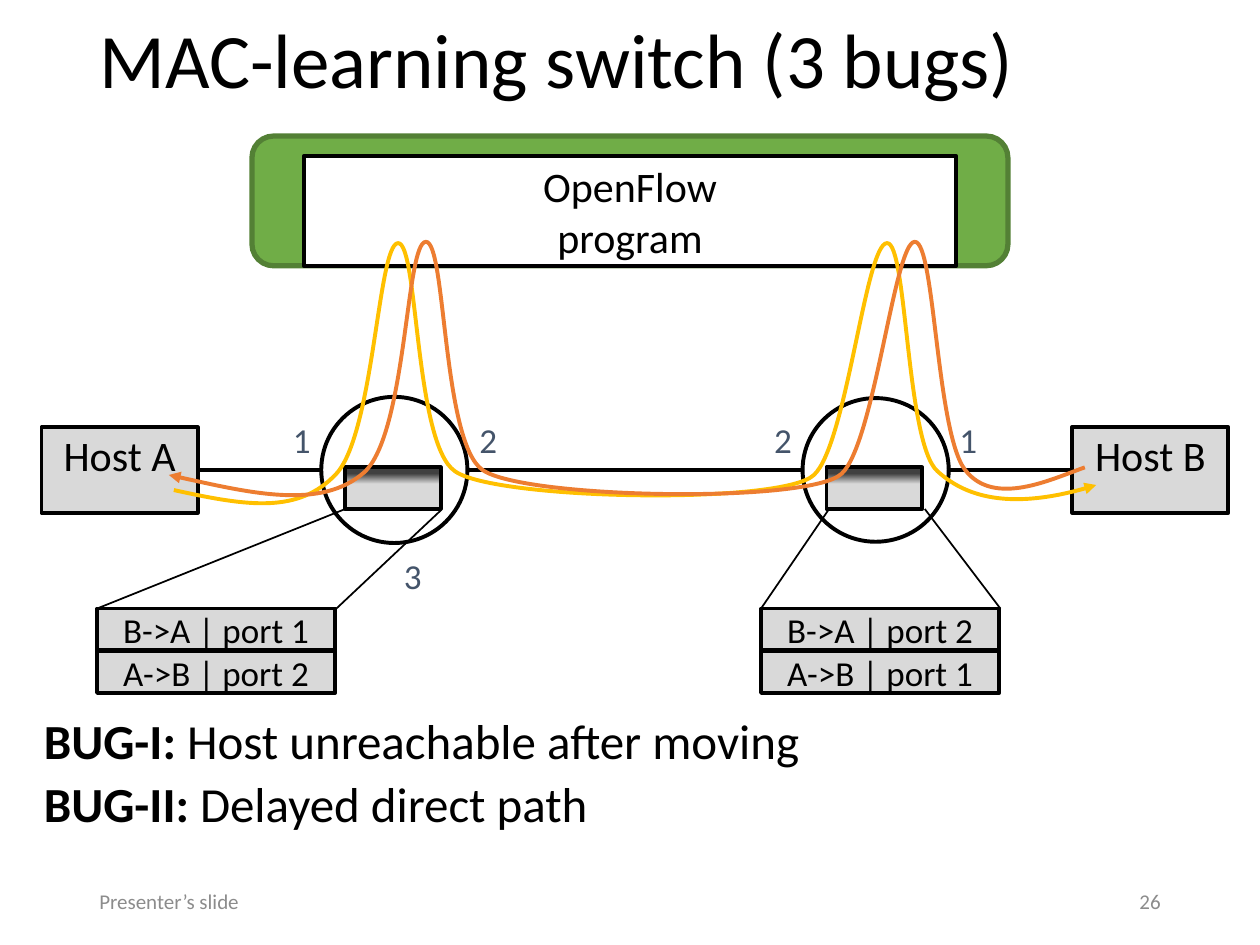
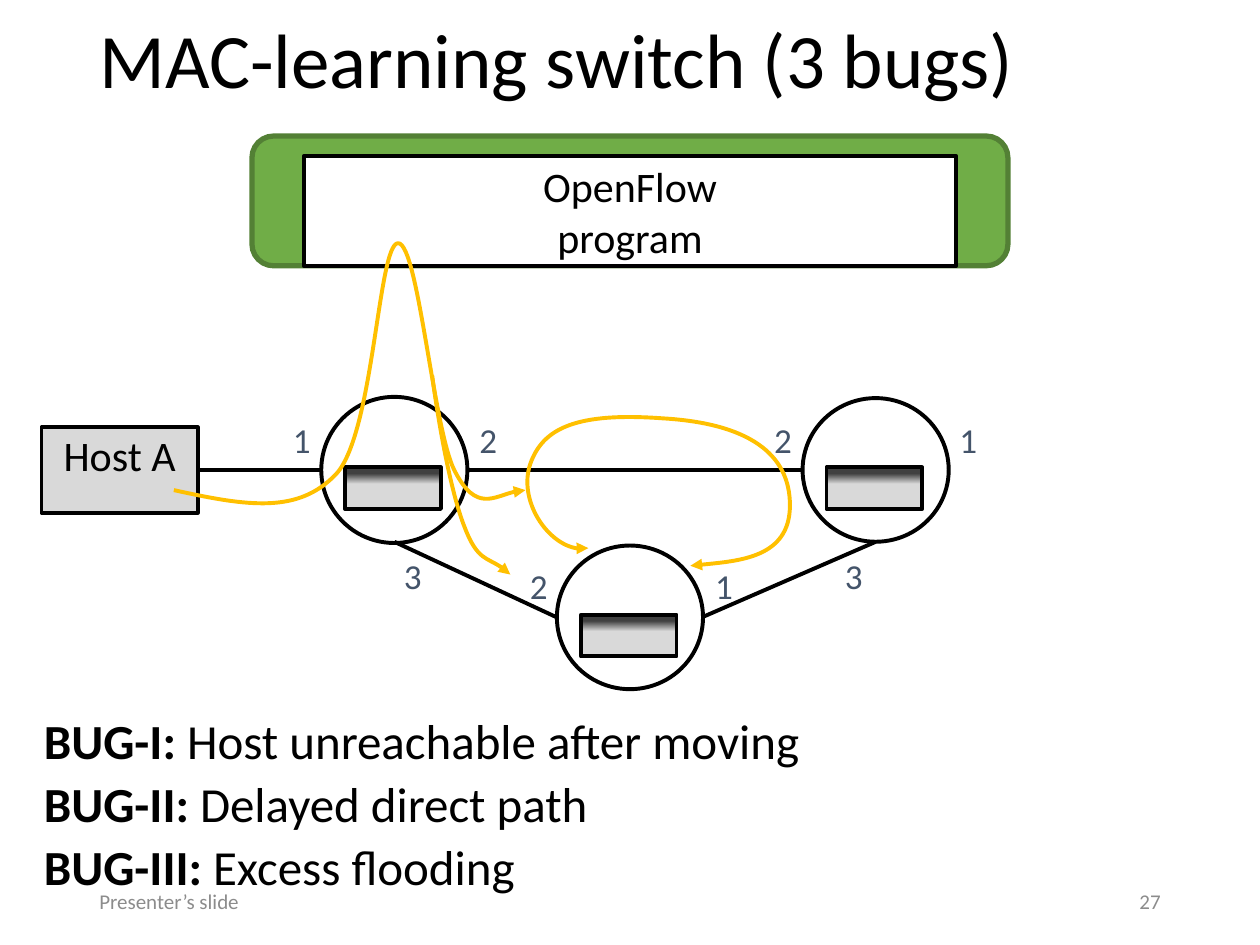
from lxml import etree
from pptx import Presentation
from pptx.dml.color import RGBColor
from pptx.enum.shapes import MSO_CONNECTOR, MSO_SHAPE
from pptx.enum.text import MSO_ANCHOR, MSO_AUTO_SIZE, PP_ALIGN
from pptx.oxml.ns import qn
from pptx.util import Emu, Pt

RECT, ROUNDED, ELLIPSE = MSO_SHAPE.RECTANGLE, MSO_SHAPE.ROUNDED_RECTANGLE, MSO_SHAPE.OVAL
STRAIGHT = MSO_CONNECTOR.STRAIGHT
LEFT, CENTER, RIGHT = PP_ALIGN.LEFT, PP_ALIGN.CENTER, PP_ALIGN.RIGHT
TOP, MIDDLE = MSO_ANCHOR.TOP, MSO_ANCHOR.MIDDLE
GROW = MSO_AUTO_SIZE.SHAPE_TO_FIT_TEXT

PX = 9144  # EMU per px, 100 px to the inch
FONT = "Calibri"
BLACK, WHITE, GREY, DARK = "000000", "FFFFFF", "D9D9D9", "404040"
GREEN, DARK_GREEN, SLATE, FOOTER = "70AD47", "538035", "44546A", "8C8C8C"
YELLOW, ORANGE = "FFC000", "ED7D31"

# Each route is a start point followed by cubic Bézier triples.
UP_TO_PROGRAM = [(138, 389), (197, 402), (237, 408), (267, 376),
                 (297, 343), (300, 193), (316, 193)]
A_TO_B = UP_TO_PROGRAM + [
    (332, 193), (329, 352), (361, 374), (393, 397), (621, 401), (646, 377),
    (672, 353), (687, 193), (704, 193), (720, 192), (719, 352), (744, 374),
    (769, 397), (810, 404), (870, 385)]
B_TO_A = [
    (134, 377), (193, 390), (255, 405), (289, 375), (323, 344), (322, 192), (338, 192),
    (354, 191), (351, 351), (383, 373), (415, 396), (643, 400), (668, 376),
    (694, 352), (710, 192), (726, 192), (742, 191), (743, 343), (766, 373),
    (789, 403), (835, 380), (861, 371)]
FLOOD_RIGHT = UP_TO_PROGRAM + [(332, 193), (344, 342), (361, 374),
                               (378, 407), (398, 390), (417, 389)]
FLOOD_DOWN = [(343, 298), (348, 336), (358, 392), (369, 419),
              (379, 445), (390, 442), (405, 456)]
FLOOD_LOOP = [(467, 435), (440, 441), (411, 397), (421, 368), (431, 340), (457, 327),
              (526, 332), (594, 336), (627, 360), (627, 401), (627, 443), (578, 446),
              (548, 449)]

BUGS = [("BUG-I: ", "Host unreachable after moving", 639),
        ("BUG-II: ", "Delayed direct path", 465),
        ("BUG-III: ", "Excess flooding", 398)]


def color(value):
    return RGBColor.from_string(value)


def assign(target, **values):
    for name, value in values.items():
        setattr(target, name, value)


class Deck:
    def __init__(self):
        self.show = Presentation()
        assign(self.show, slide_width=Emu(1000 * PX), slide_height=Emu(750 * PX))
        self.slide = None

    def new_slide(self):
        self.slide = self.show.slides.add_slide(self.show.slide_layouts[6])

    def stroke(self, line, tint, width):
        line.color.rgb = color(tint)
        line.width = Pt(width)

    def put_text(self, frame, text, size, tint=BLACK, align=CENTER, anchor=MIDDLE,
                 inset=(10, 5), wrap=True, lead=""):
        """Fill a text frame; lead is a bold run before the text."""
        side, edge = (Emu(n * PX) for n in inset)
        assign(frame, margin_left=side, margin_right=side, margin_top=edge,
               margin_bottom=edge, word_wrap=wrap, vertical_anchor=anchor)
        if not wrap:
            frame.auto_size = GROW
        line = frame.paragraphs[0]
        line.alignment = align
        line.text = lead or text
        if lead:
            line.add_run().text = text
        for run in line.runs:
            assign(run.font, name=FONT, size=Pt(size), bold=run.text == lead)
            run.font.color.rgb = color(tint)
        return line

    def text(self, box, text, size, **style):
        label = self.slide.shapes.add_textbox(*(Emu(n * PX) for n in box))
        return self.put_text(label.text_frame, text, size, **style)

    def shape(self, kind, box, fill=None, line=BLACK, width=2.25):
        form = self.slide.shapes.add_shape(kind, *(Emu(n * PX) for n in box))
        form.shadow.inherit = False
        if fill:
            form.fill.solid()
            form.fill.fore_color.rgb = color(fill)
        else:
            form.fill.background()
        self.stroke(form.line, line, width)
        return form

    def link(self, start, end, width=2.25):
        wire = self.slide.shapes.add_connector(
            STRAIGHT, *(Emu(n * PX) for n in start + end))
        self.stroke(wire.line, BLACK, width)
        etree.SubElement(wire.element.find(qn("p:spPr")), qn("a:effectLst"))

    def route(self, points, tint, ends=("tailEnd",)):
        """Draw a smooth open curve with arrowheads at the named ends."""
        builder = self.slide.shapes.build_freeform(*points[0], scale=PX)
        builder.add_line_segments(points[1:], close=False)
        curve = builder.convert_to_shape()
        curve.shadow.inherit = False
        curve.fill.background()
        self.stroke(curve.line, tint, 2.25)
        outline = curve.element.find(".//" + qn("a:path"))
        steps = outline.findall(qn("a:lnTo"))
        for first in range(0, len(steps), 3):
            bezier = etree.SubElement(outline, qn("a:cubicBezTo"))
            for step in steps[first:first + 3]:
                bezier.append(step[0])
                outline.remove(step)
        pen = curve.element.find(qn("p:spPr")).find(qn("a:ln"))
        for end in ends:
            etree.SubElement(pen, qn("a:" + end), type="triangle")

    def host(self, left, name):
        box = self.shape(RECT, (left, 339, 124, 68), GREY)
        self.put_text(box.text_frame, name, 24, anchor=TOP, inset=(2, 2))

    def switch(self, left, top, height):
        self.shape(ELLIPSE, (left, top, 116, height))
        buffer = self.shape(RECT, (left + 19, top + height // 2 - 2, 76, 33))
        buffer.fill.gradient()
        buffer.fill.gradient_angle = 270
        for stop, (position, tint) in zip(buffer.fill.gradient_stops,
                                          [(0.15, DARK), (0.4, GREY)]):
            stop.position = position
            stop.color.rgb = color(tint)

    def port(self, left, top, number):
        self.text((left, top, 21, 37), number, 20, tint=SLATE, anchor=TOP,
                  inset=(3, 2), wrap=False)

    def rules(self, left, entries, buffer_corners):
        """Draw a forwarding table zoomed out of a switch buffer."""
        for row, entry in enumerate(entries):
            cell = self.shape(RECT, (left, 483 + 34 * row, 189, 33), GREY)
            self.put_text(cell.text_frame, entry, 20, inset=(2, 2))
        for corner, target in zip((left, left + 190), buffer_corners):
            self.link((corner, 483), (target, 404), 1)

    def bugs(self, count):
        for row, (lead, text, width) in enumerate(BUGS[:count]):
            self.text((25, 559 + 50 * row, width, 57), text, 28, align=LEFT,
                      anchor=TOP, wrap=False, lead=lead)

    def frame(self, number):
        """Add the title and the footer."""
        title = self.text((69, -22, 862, 145), "MAC-learning switch (3 bugs)", 44,
                          align=LEFT)
        title.line_spacing = 0.9
        self.text((69, 695, 225, 40), "Presenter’s slide", 12, tint=FOOTER, align=LEFT)
        self.text((706, 695, 225, 40), number, 12, tint=FOOTER, align=RIGHT)

    def network(self):
        """Draw the controller, host A and the two upper switches."""
        self.link((370, 373), (637, 373))
        self.shape(ROUNDED, (200, 108, 600, 103), GREEN, DARK_GREEN, 3)
        program = self.shape(RECT, (241, 124, 518, 87), WHITE)
        self.put_text(program.text_frame, "OpenFlow\nprogram", 24)
        self.host(33, "Host A")
        self.link((157, 373), (255, 373))
        self.switch(255, 315, 116)
        self.switch(637, 316, 114)
        for left, number in [(229, "1"), (377, "2"), (611, "2"), (758, "1")]:
            self.port(left, 330, number)
        self.port(317, 438, "3")


def direct_path_slide(deck):
    deck.new_slide()
    deck.network()
    deck.link((752, 373), (851, 373))
    deck.host(851, "Host B")
    deck.rules(77, ["B->A | port 1", "A->B | port 2"], (274, 351))
    deck.rules(604, ["B->A | port 2", "A->B | port 1"], (658, 734))
    deck.route(A_TO_B, YELLOW)
    deck.route(B_TO_A, ORANGE, ["headEnd"])
    deck.bugs(2)
    deck.frame("26")


def flooding_slide(deck):
    deck.new_slide()
    deck.network()
    deck.bugs(3)
    deck.switch(442, 433, 114)
    deck.link((313, 430), (442, 490))
    deck.link((557, 490), (695, 430))
    for left, top, number in [(667, 438, "3"), (417, 446, "2"), (564, 446, "1")]:
        deck.port(left, top, number)
    deck.route(FLOOD_RIGHT, YELLOW)
    deck.route(FLOOD_DOWN, YELLOW)
    deck.route(FLOOD_LOOP, YELLOW, ["headEnd", "tailEnd"])
    deck.frame("27")


def main():
    deck = Deck()
    direct_path_slide(deck)
    flooding_slide(deck)
    deck.show.save("out.pptx")


if __name__ == "__main__":
    main()
